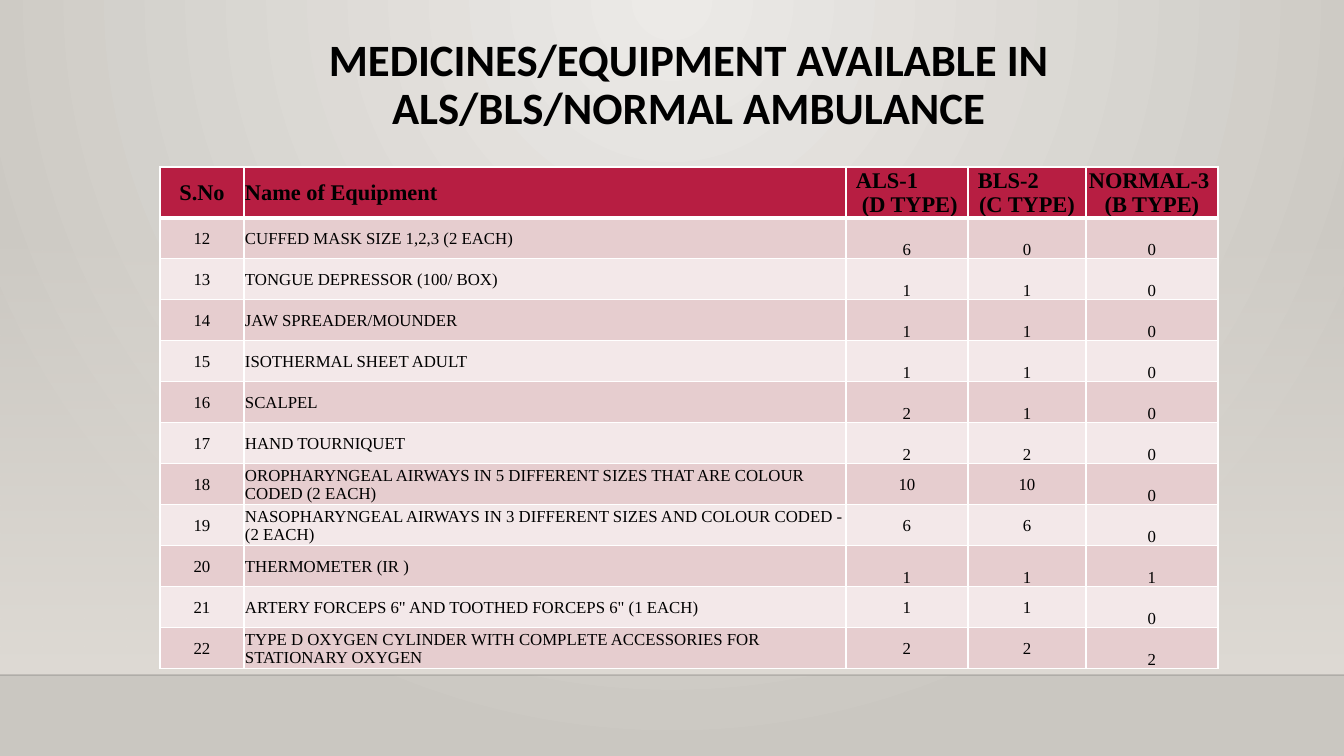
from lxml.etree import SubElement as Sub
from pptx import Presentation
from pptx.dml.color import RGBColor
from pptx.enum.shapes import MSO_CONNECTOR, MSO_SHAPE
from pptx.enum.text import MSO_ANCHOR as Anchor, MSO_AUTO_SIZE, PP_ALIGN as Align
from pptx.oxml import parse_xml
from pptx.oxml.ns import nsdecls, qn
from pptx.util import Pt

WIDE, HIGH = 1344, 756
PX = 12192000 / WIDE

BLACK = RGBColor(0x00, 0x00, 0x00)
EDGE = RGBColor(0x00, 0x00, 0x01)
WHITE = RGBColor(0xFF, 0xFF, 0xFF)
RED = RGBColor(0xB7, 0x1E, 0x42)
ROSE = RGBColor(0xE6, 0xCD, 0xCF)
PALE = RGBColor(0xF3, 0xE8, 0xE9)
LIGHT = RGBColor(0xEC, 0xEA, 0xE7)
STONE = RGBColor(0xCA, 0xC7, 0xC1)
SAND = RGBColor(0xDF, 0xDB, 0xD5)

TITLE = "MEDICINES/EQUIPMENT AVAILABLE IN ALS/BLS/NORMAL AMBULANCE"
COLS = [84, 602, 122, 118, 132]
HEAD = ["S.No", "Name of Equipment", "ALS-1\n (D TYPE)",
        "BLS-2\n(C TYPE)", "NORMAL-3 \n(B TYPE)"]
FIRST = 12
# Name, the three counts, and whether the ALS and BLS counts sit mid-cell
ITEMS = [
    ("CUFFED MASK SIZE 1,2,3 (2 EACH)", 6, 0, 0, False),
    ("TONGUE DEPRESSOR (100/ BOX)", 1, 1, 0, False),
    ("JAW SPREADER/MOUNDER", 1, 1, 0, False),
    ("ISOTHERMAL SHEET ADULT", 1, 1, 0, False),
    ("SCALPEL", 2, 1, 0, False),
    ("HAND TOURNIQUET", 2, 2, 0, False),
    ("OROPHARYNGEAL AIRWAYS IN 5 DIFFERENT SIZES THAT ARE COLOUR CODED (2 EACH)",
     10, 10, 0, True),
    ("NASOPHARYNGEAL AIRWAYS IN 3 DIFFERENT SIZES AND COLOUR CODED -(2 EACH)",
     6, 6, 0, True),
    ("THERMOMETER (IR )", 1, 1, 1, False),
    ('ARTERY FORCEPS 6" AND TOOTHED FORCEPS 6" (1 EACH)', 1, 1, 0, True),
    ("TYPE D OXYGEN CYLINDER WITH COMPLETE ACCESSORIES FOR STATIONARY OXYGEN",
     2, 2, 2, True),
]


def px(*nums):
    return [round(n * PX) for n in nums]


def blend(fill, start, end):
    fill.gradient()
    for stop, tone, pos in zip(fill.gradient_stops, (start, end), (0, 1)):
        stop.color.rgb = tone
        stop.position = pos


def fade(node, share):
    Sub(node.find(".//" + qn("a:srgbClr")), qn("a:alpha"), val=str(share * 1000))


def add_wall(slide, box):
    # Round glow from the top of the slide
    blend(slide.background.fill, LIGHT, STONE)
    grad = slide.element.find(".//" + qn("a:gradFill"))
    grad.replace(grad.find(qn("a:lin")), parse_xml(
        f'<a:path {nsdecls("a")} path="circle">'
        '<a:fillToRect l="43000" t="0" r="43000" b="100000"/></a:path>'))

    # Haze that thickens down to the floor line
    x, y, w, h = box
    haze = slide.shapes.add_shape(MSO_SHAPE.RECTANGLE, *px(x, y, w, h))
    haze.shadow.inherit = False
    haze.line.fill.background()
    blend(haze.fill, SAND, SAND)
    haze.fill.gradient_angle = 270
    fade(haze.element.spPr, 0)

    floor = slide.shapes.add_connector(
        MSO_CONNECTOR.STRAIGHT, *px(x, y + h, x + w, y + h))
    floor.line.color.rgb = EDGE
    floor.line.width = Pt(1)
    line = floor.element.spPr
    fade(line, 20)
    Sub(line, qn("a:effectLst"))


def style(para, face, size, bold, align):
    para.alignment = align
    for run in para.runs:
        font = run.font
        font.name, font.size, font.bold = face, Pt(size), bold
        font.color.rgb = BLACK


def add_title(slide, box):
    title = slide.shapes.title
    title.left, title.top, title.width, title.height = px(*box)
    frame = title.text_frame
    frame.text = TITLE
    frame.word_wrap = True
    frame.auto_size = MSO_AUTO_SIZE.NONE
    frame.vertical_anchor = Anchor.MIDDLE
    para = frame.paragraphs[0]
    para.line_spacing = 0.9
    style(para, "Calibri", 32, True, Align.CENTER)


def set_edges(cell, top, base):
    props = cell._tc.get_or_add_tcPr()
    for i, (side, wide) in enumerate(zip("LRTB", (1, 1, top, base))):
        props.insert(i, parse_xml(
            f'<a:ln{side} {nsdecls("a")} w="{Pt(wide)}"><a:solidFill>'
            f'<a:srgbClr val="{WHITE}"/></a:solidFill></a:ln{side}>'))


def fill_cell(cell, text, row, col, anchor):
    head = row == 0
    cell.text = text
    cell.vertical_anchor = anchor
    cell.margin_left = cell.margin_right = cell.margin_top = px(1)[0]
    cell.margin_bottom = 0
    cell.fill.solid()
    cell.fill.fore_color.rgb = RED if head else ROSE if row % 2 else PALE
    set_edges(cell, 3 if row == 1 else 1, 3 if head else 1)
    align = Align.LEFT if col == 1 else Align.CENTER
    for para in cell.text_frame.paragraphs:
        style(para, "Times New Roman", 16 if head else 12, head, align)
    # The ALS and BLS labels start left of their type line
    if head and col in (2, 3):
        label = cell.text_frame.paragraphs[0]
        label.alignment = Align.LEFT
        label._p.get_or_add_pPr().set("marL", str(px(9)[0]))


def add_items(slide, box):
    x, y, w, h = box
    count = len(ITEMS) + 1
    table = slide.shapes.add_table(count, len(COLS), *px(x, y, w, h)).table
    for col, wide in zip(table.columns, COLS):
        col.width = px(wide)[0]
    step = h // count
    for row in table.rows:
        row.height = px(step)[0]
    table.rows[0].height = px(h - step * len(ITEMS))[0]

    mid, low = Anchor.MIDDLE, Anchor.BOTTOM
    for col, text in enumerate(HEAD):
        fill_cell(table.cell(0, col), text, 0, col, low if col == 4 else mid)
    for row, (name, *counts, raised) in enumerate(ITEMS, 1):
        texts = [FIRST + row - 1, name, *counts]
        for col, text in enumerate(texts):
            anchor = mid if col < 2 or raised and col < 4 else low
            fill_cell(table.cell(row, col), str(text), row, col, anchor)


def main():
    deck = Presentation()
    deck.slide_width, deck.slide_height = px(WIDE, HIGH)
    slide = deck.slides.add_slide(deck.slide_layouts[5])
    add_wall(slide, (0, 223, WIDE, 452))
    add_title(slide, (160, 28, 1058, 116))
    add_items(slide, (160, 167, 1058, 501))
    deck.save("out.pptx")


if __name__ == "__main__":
    main()
